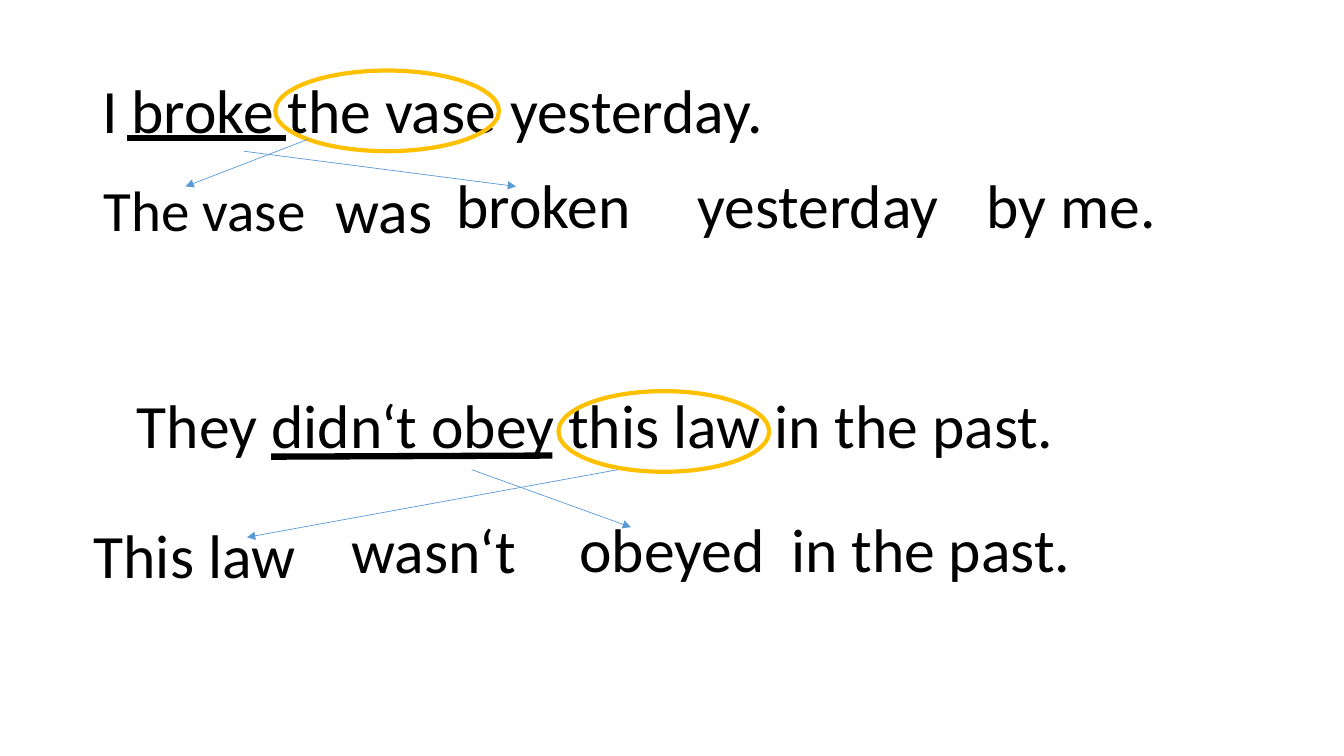
from lxml import etree
from pptx import Presentation
from pptx.dml.color import RGBColor
from pptx.enum.shapes import MSO_CONNECTOR, MSO_SHAPE
from pptx.enum.text import MSO_ANCHOR
from pptx.oxml.ns import qn
from pptx.util import Pt

MIDDLE = MSO_ANCHOR.MIDDLE
OVAL = MSO_SHAPE.OVAL
STRAIGHT = MSO_CONNECTOR.STRAIGHT
BLACK, GOLD, BLUE = "000000", "FFC000", "5B9BD5"

PHRASES = [
    ("I broke the vase yesterday.", 66, 28.8, 828, 104.4, 44),
    ("The vase", 67, 108, 165, 88.6, 40.7),
    ("was", 232.6, 108, 94.3, 89.3, 44),
    ("broken", 319, 104.4, 149.8, 88.6, 44),
    ("yesterday", 491, 104.4, 239, 88.6, 44),
    ("by me.", 697.7, 104.4, 196.6, 88.6, 44),
    ("They didn‘t obey this law in the past.", 90.7, 254.2, 862.6, 104.4, 44),
    ("This law", 59.8, 355, 296.6, 88.6, 44),
    ("wasn‘t", 244, 350.6, 189.4, 89.3, 44),
    ("obeyed", 406.8, 350.6, 149.8, 88.6, 44),
    ("in the past.", 558, 350.6, 239, 88.6, 44),
]
RINGS = [(196.6, 50.4, 159.8, 57.6), (398.9, 279.4, 150.5, 57.6)]
VERBS = [(90.7, 98.6, 204.5, 98.6), (193.7, 326.2, 394.6, 325.4)]
MOVES = [
    (220.3, 99.4, 132.5, 133.2),
    (174.2, 108, 368.6, 133.2),
    (441.4, 335.5, 176.4, 383.8),
    (337, 335.5, 450.7, 376.6),
]


def color(code):
    """Turn a hex string into a colour."""
    return RGBColor.from_string(code)


def add_phrase(slide, text, left, top, width, height, size):
    """Add one phrase, centred vertically in its box."""
    box = slide.shapes.add_textbox(Pt(left), Pt(top), Pt(width), Pt(height))
    frame = box.text_frame
    frame.word_wrap = True
    frame.vertical_anchor = MIDDLE
    para = frame.paragraphs[0]
    para.line_spacing = 0.9
    run = para.add_run()
    run.text = text
    run.font.name = "Calibri"
    run.font.size = Pt(size)
    run.font.color.rgb = color(BLACK)


def add_ring(slide, left, top, width, height):
    """Circle the object of a sentence."""
    ring = slide.shapes.add_shape(OVAL, Pt(left), Pt(top), Pt(width), Pt(height))
    ring.shadow.inherit = False
    ring.fill.background()
    ring.line.color.rgb = color(GOLD)
    ring.line.width = Pt(3)


def add_line(slide, ends, code, width, arrow=False):
    """Draw a straight line, with an arrowhead if asked."""
    line = slide.shapes.add_connector(STRAIGHT, *[Pt(end) for end in ends])
    line.line.color.rgb = color(code)
    line.line.width = Pt(width)
    props = line._element.spPr
    if arrow:
        etree.SubElement(props.find(qn("a:ln")), qn("a:tailEnd"), type="triangle")
    etree.SubElement(props, qn("a:effectLst"))


def main():
    """Build the passive voice slide."""
    deck = Presentation()
    deck.slide_width, deck.slide_height = Pt(960), Pt(540)
    slide = deck.slides.add_slide(deck.slide_layouts[6])
    for phrase in PHRASES:
        add_phrase(slide, *phrase)
    for ring in RINGS:
        add_ring(slide, *ring)
    for ends in VERBS:
        add_line(slide, ends, BLACK, 4.5)
    for ends in MOVES:
        add_line(slide, ends, BLUE, 0.5, arrow=True)
    deck.save("out.pptx")


if __name__ == "__main__":
    main()
